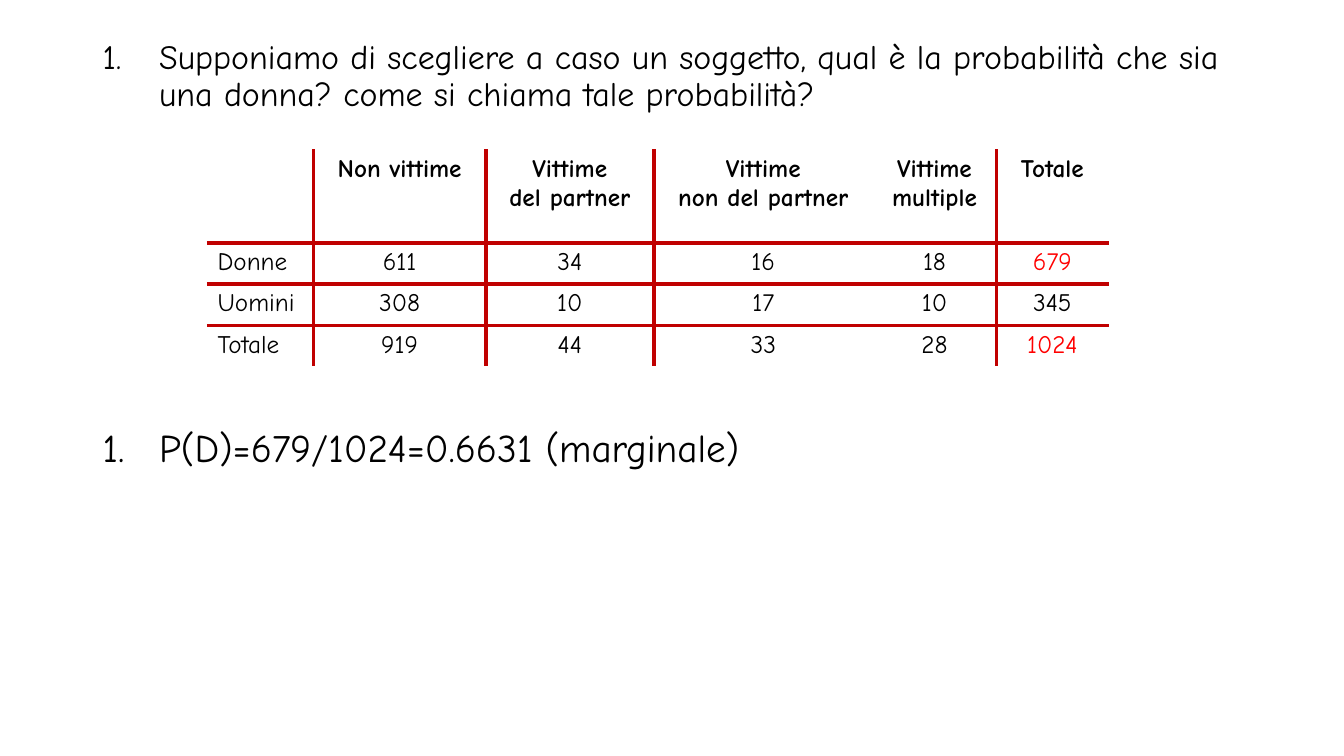
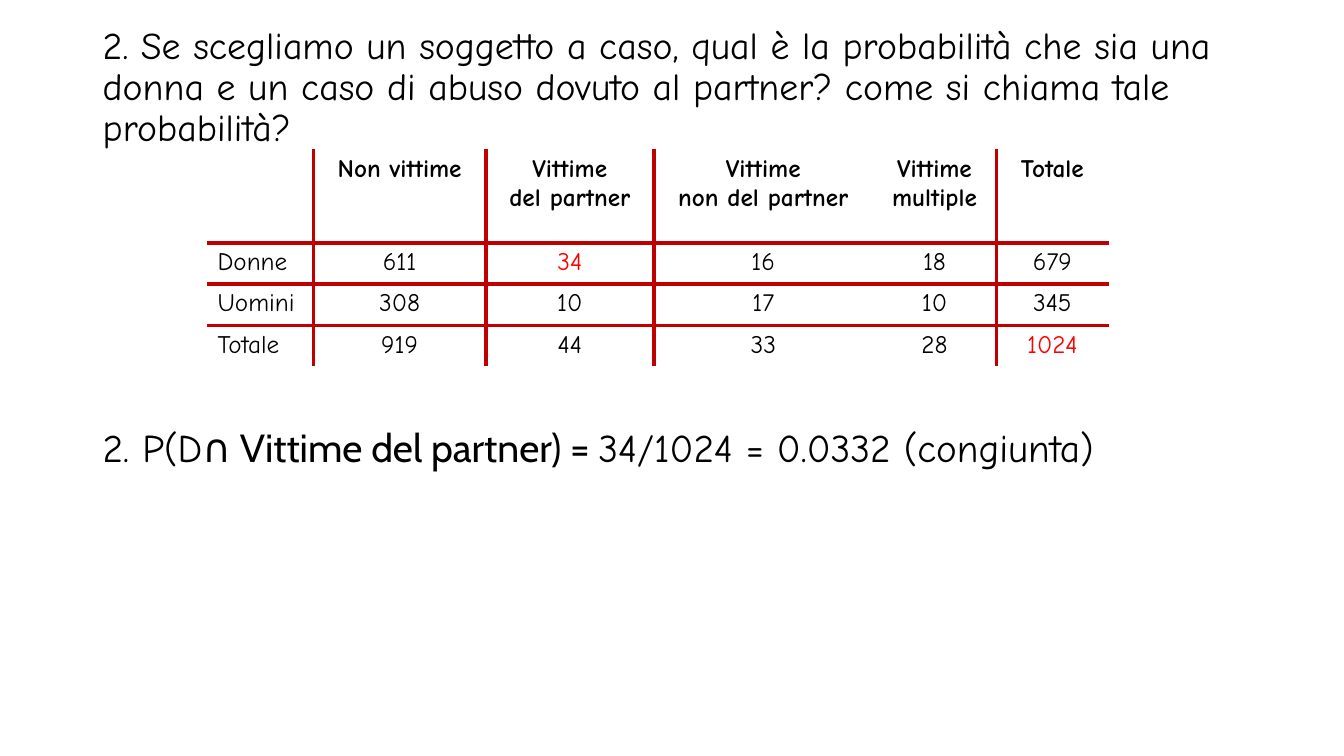
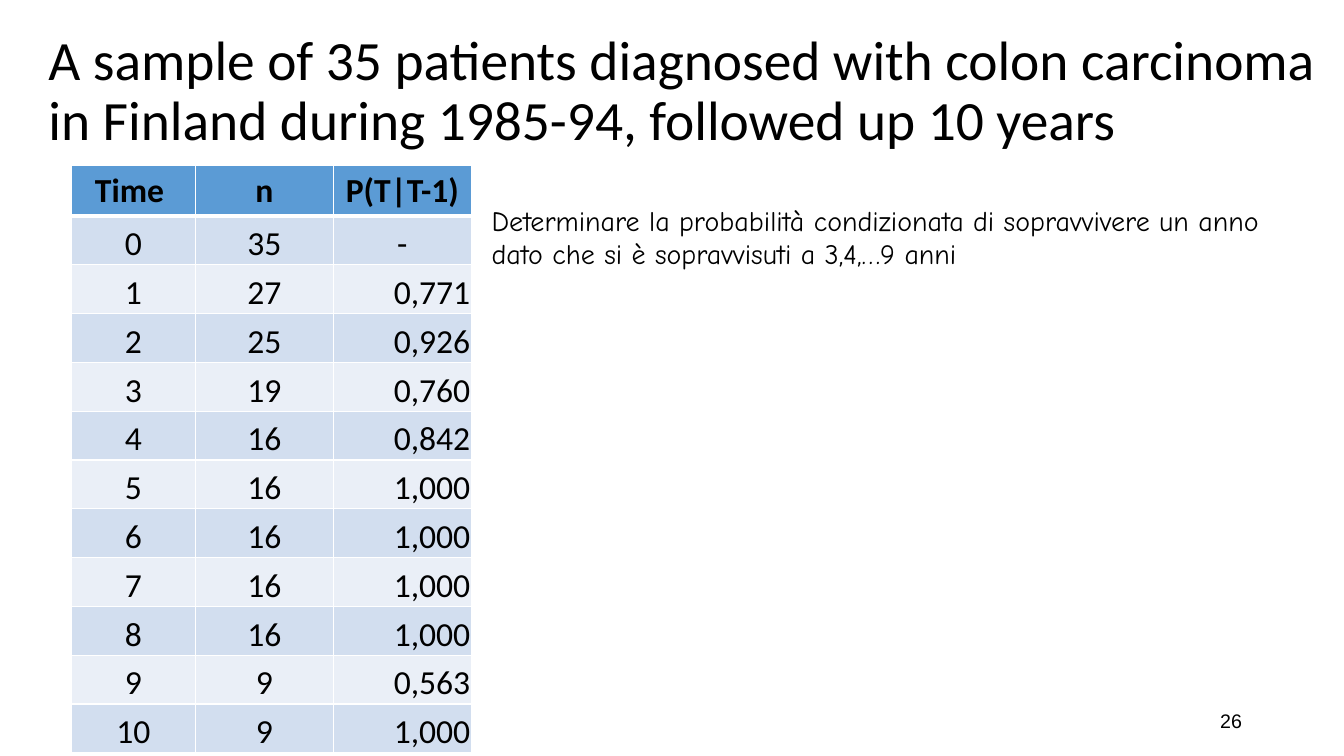
"""Three slides on marginal, joint and conditional probability tables."""
from pptx import Presentation
from pptx.dml.color import RGBColor
from pptx.enum import text as t
from pptx.oxml.ns import qn
from pptx.util import Cm, Pt
from lxml import etree

COLORS = {"ink": "000000", "mark": "FF0000", "rule": "C00000", "white": "FFFFFF",
          "head": "5B9BD5", "odd": "D2DEEF", "even": "EAEFF7"}
HAND, PLAIN, SANS, NUMBER = "Comic Neue", "Calibri", "Cabin", "Arial"
ALIGN, ANCHOR = t.PP_ALIGN, t.MSO_ANCHOR

VICTIMS = [
    ("", "Non vittime", "Vittime\ndel partner", "Vittime\nnon del partner",
     "Vittime\nmultiple", "Totale"),
    ("Donne", "611", "34", "16", "18", "679"),
    ("Uomini", "308", "10", "17", "10", "345"),
    ("Totale", "919", "44", "33", "28", "1024"),
]
VICTIM_COLS, VICTIM_ROWS = (2.67, 4.34, 4.24, 5.51, 3.12, 2.82), (2.34, 1.04, 1.04, 1.04)
RULED_COLS, RULED_ROWS = (0, 1, 4), (0, 1, 2)

EXERCISES = [
    {"question": "Supponiamo di scegliere a caso un soggetto, qual è la probabilità "
                 "che sia una donna? come si chiama tale probabilità?",
     "top": 1.02, "size": 24.3, "numbered": True, "anchor": ANCHOR.TOP,
     "answer": [("P(D)=679/1024=0.6631 (marginale)", HAND)],
     "answer_width": 18.16, "marked": {(1, 5), (3, 5)}},
    {"question": "2. Se scegliamo un soggetto a caso, qual è la probabilità che sia una "
                 "donna e un caso di abuso dovuto al partner? come si chiama tale probabilità?",
     "top": 0.38, "size": 27, "numbered": False, "anchor": ANCHOR.MIDDLE,
     "answer": [("2. P(D", HAND), ("∩ Vittime del partner) = ", SANS),
                ("34/1024 = 0.0332 (congiunta)", HAND)],
     "answer_width": 27.46, "marked": {(1, 2), (3, 5)}},
]

SURVIVAL_TITLE = ("A sample of 35 patients diagnosed with colon carcinoma in Finland "
                  "during 1985-94, followed up 10 years")
SURVIVAL_TASK = ("Determinare la probabilità condizionata di sopravvivere un anno dato "
                 "che si è sopravvisuti a 3,4,…9 anni")
SURVIVAL = [
    ("Time ", "n", "P(T|T-1)"), ("0", "35", "-"), ("1", "27", "0,771"),
    ("2", "25", "0,926"), ("3", "19", "0,760"), ("4", "16", "0,842"),
    ("5", "16", "1,000"), ("6", "16", "1,000"), ("7", "16", "1,000"),
    ("8", "16", "1,000"), ("9", "9", "0,563"), ("10", "9", "1,000"),
]
SURVIVAL_COLS, SURVIVAL_ROWS = (3.12, 3.48, 3.48), (1.07,) + (1.23,) * 11


def style(font, face, size, color="ink", bold=False):
    font.name, font.size, font.bold = face, Pt(size), bold
    font.color.rgb = RGBColor.from_string(COLORS[color])


def add_text(slide, box, runs, size, anchor=ANCHOR.TOP, align=ALIGN.LEFT,
             spacing=1.0, numbered=False):
    frame = slide.shapes.add_textbox(*map(Cm, box)).text_frame
    frame.word_wrap, frame.vertical_anchor = True, anchor
    paragraph = frame.paragraphs[0]
    paragraph.alignment, paragraph.line_spacing = align, spacing
    if numbered:
        props = paragraph._p.get_or_add_pPr()
        props.set("marL", str(Cm(1.42)))
        props.set("indent", str(-Cm(1.42)))
        etree.SubElement(props, qn("a:buAutoNum")).set("type", "arabicPeriod")
    for words, face in runs:
        run = paragraph.add_run()
        run.text = words
        style(run.font, face, size)
    return frame


def set_border(cell, side, color, width):
    props = cell._tc.get_or_add_tcPr()
    line = etree.Element(qn(f"a:ln{side}"), w=str(Pt(width)))
    fill = etree.SubElement(line, qn("a:solidFill"))
    etree.SubElement(fill, qn("a:srgbClr")).set("val", COLORS[color])
    props.insert(len(props.findall("*")) - 1, line)


def add_grid(slide, left, top, content, widths, heights):
    table = slide.shapes.add_table(len(heights), len(widths), Cm(left), Cm(top),
                                   Cm(sum(widths)), Cm(sum(heights))).table
    table.first_row = table.horz_banding = False
    for column, width in zip(table.columns, widths):
        column.width = Cm(width)
    for row, height in zip(table.rows, heights):
        row.height = Cm(height)
    for r, values in enumerate(content):
        for c, value in enumerate(values):
            cell = table.cell(r, c)
            cell.text_frame.text = value
            yield r, c, cell


def style_cell(cell, face, size, align, color="ink", bold=False):
    for paragraph in cell.text_frame.paragraphs:
        paragraph.alignment = align
        for run in paragraph.runs:
            style(run.font, face, size, color, bold)


def add_victims(slide, marked):
    for r, c, cell in add_grid(slide, 5.23, 3.78, VICTIMS, VICTIM_COLS, VICTIM_ROWS):
        style_cell(cell, HAND, 18, ALIGN.CENTER if c else ALIGN.LEFT,
                   "mark" if (r, c) in marked else "ink", r == 0)
        cell.fill.background()
        for side, ruled in (("L", c - 1 in RULED_COLS), ("R", c in RULED_COLS),
                            ("T", r - 1 in RULED_ROWS), ("B", r in RULED_ROWS)):
            if ruled:
                set_border(cell, side, "rule", 3)


def add_survival(slide):
    for r, c, cell in add_grid(slide, 1.8, 4.17, SURVIVAL, SURVIVAL_COLS, SURVIVAL_ROWS):
        style_cell(cell, PLAIN, 24, ALIGN.RIGHT if c == 2 and r > 1 else ALIGN.CENTER,
                   bold=r == 0)
        fill = "head" if r == 0 else "odd" if r % 2 else "even"
        cell.fill.solid()
        cell.fill.fore_color.rgb = RGBColor.from_string(COLORS[fill])
        if r:
            cell.vertical_anchor = ANCHOR.BOTTOM
            cell.margin_left = cell.margin_right = cell.margin_top = Cm(0.03)
            cell.margin_bottom = 0
        for side in "LRTB":
            thick = (r, side) in ((0, "B"), (1, "T"))
            set_border(cell, side, "white", 3 if thick else 1)


def main():
    deck = Presentation()
    deck.slide_width, deck.slide_height = Cm(33.87), Cm(19.05)
    blank = deck.slide_layouts[6]

    for exercise in EXERCISES:
        slide = deck.slides.add_slide(blank)
        add_victims(slide, exercise["marked"])
        add_text(slide, (2.34, 10.54, exercise["answer_width"], 1.45), exercise["answer"],
                 28, numbered=exercise["numbered"])
        question = add_text(slide, (2.34, exercise["top"], 29.21, 3.68),
                            [(exercise["question"], HAND)], exercise["size"],
                            exercise["anchor"], spacing=0.9, numbered=exercise["numbered"])
        if exercise["anchor"] == ANCHOR.TOP:
            question.margin_top = 0

    slide = deck.slides.add_slide(blank)
    add_text(slide, (0.97, 0.15, 32.89, 4.37), [(SURVIVAL_TITLE, PLAIN)], 39.6,
             ANCHOR.MIDDLE, spacing=0.9)
    add_survival(slide)
    add_text(slide, (23.93, 17.65, 7.62, 1.02), [("26", NUMBER)], 14,
             ANCHOR.MIDDLE, ALIGN.RIGHT)
    add_text(slide, (12.14, 5, 20.24, 1.96), [(SURVIVAL_TASK, HAND)], 20)

    deck.save("out.pptx")


if __name__ == "__main__":
    main()
